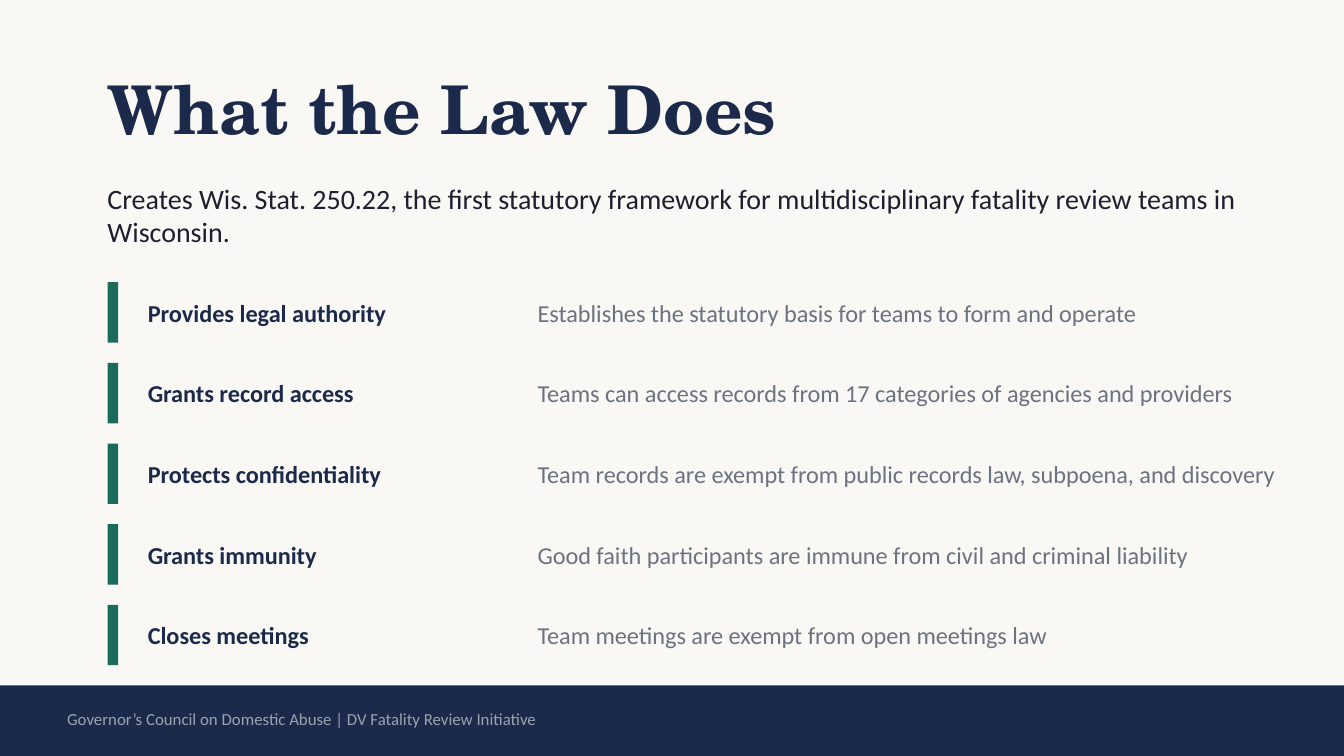
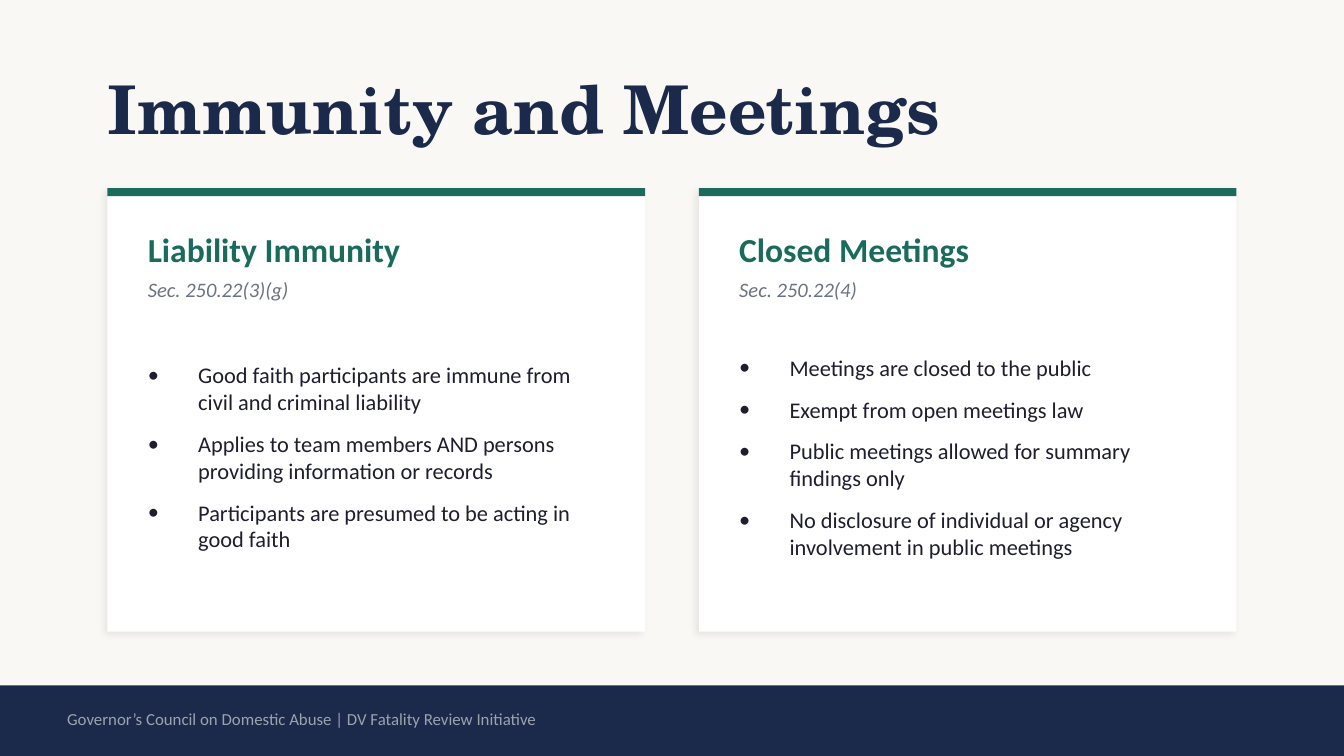
from lxml.etree import SubElement
from pptx import Presentation
from pptx.dml.color import RGBColor
from pptx.enum.shapes import MSO_SHAPE
from pptx.enum.text import MSO_ANCHOR, MSO_AUTO_SIZE, PP_ALIGN
from pptx.oxml.ns import qn
from pptx.util import Inches, Pt

NAVY = RGBColor(0x1B, 0x2A, 0x4A)
GREEN = RGBColor(0x1A, 0x6B, 0x5C)
CREAM = RGBColor(0xFA, 0xF8, 0xF4)
WHITE = RGBColor(0xFF, 0xFF, 0xFF)
INK = RGBColor(0x1E, 0x1E, 0x2E)
GRAY = RGBColor(0x6B, 0x72, 0x80)
LIGHT_GRAY = RGBColor(0x9C, 0xA3, 0xAF)

TITLE_FONT = "TeX Gyre Schola"
BODY_FONT = "Calibri"
SLIDE_WIDTH = 10
SLIDE_HEIGHT = SLIDE_WIDTH * 9 / 16
MARGIN = 0.8
CONTENT_WIDTH = SLIDE_WIDTH - 2 * MARGIN
BULLET_INDENT = Pt(27)
FOOTER = "Governor’s Council on Domestic Abuse | DV Fatality Review Initiative"

PROVISIONS = [
    ("Provides legal authority",
     "Establishes the statutory basis for teams to form and operate"),
    ("Grants record access",
     "Teams can access records from 17 categories of agencies and providers"),
    ("Protects confidentiality",
     "Team records are exempt from public records law, subpoena, and discovery"),
    ("Grants immunity",
     "Good faith participants are immune from civil and criminal liability"),
    ("Closes meetings",
     "Team meetings are exempt from open meetings law"),
]

CARDS = [
    ("Liability Immunity", "Sec. 250.22(3)(g)", [
        "Good faith participants are immune from civil and criminal liability",
        "Applies to team members AND persons providing information or records",
        "Participants are presumed to be acting in good faith",
    ]),
    ("Closed Meetings", "Sec. 250.22(4)", [
        "Meetings are closed to the public",
        "Exempt from open meetings law",
        "Public meetings allowed for summary findings only",
        "No disclosure of individual or agency involvement in public meetings",
    ]),
]


def prepare_frame(frame):
    frame.word_wrap = True
    frame.auto_size = MSO_AUTO_SIZE.NONE
    frame.vertical_anchor = MSO_ANCHOR.MIDDLE
    frame.margin_left = frame.margin_right = 0
    frame.margin_top = frame.margin_bottom = 0


def add_run(paragraph, text, size, color, bold=False, italic=False, font=BODY_FONT):
    run = paragraph.add_run()
    run.text = text
    run.font.name = font
    run.font.size = Pt(size)
    run.font.bold = bold
    run.font.italic = italic
    run.font.color.rgb = color


def add_frame(slide, left, top, width, height):
    """Add an empty text box and return its text frame."""
    box = slide.shapes.add_textbox(
        Inches(left), Inches(top), Inches(width), Inches(height))
    prepare_frame(box.text_frame)
    return box.text_frame


def add_text(slide, left, top, width, height, text, size, color, **style):
    frame = add_frame(slide, left, top, width, height)
    add_run(frame.paragraphs[0], text, size, color, **style)


def add_bullets(slide, left, top, width, height, items):
    frame = add_frame(slide, left, top, width, height)
    for i, item in enumerate(items):
        paragraph = frame.paragraphs[0] if i == 0 else frame.add_paragraph()
        properties = paragraph._p.get_or_add_pPr()
        properties.set("marL", str(BULLET_INDENT))
        properties.set("indent", str(-BULLET_INDENT))
        SubElement(properties, qn("a:buSzPct"), val="100000")
        SubElement(properties, qn("a:buFont"), typeface=BODY_FONT)
        SubElement(properties, qn("a:buChar"), char="•")
        paragraph.font.size = Pt(12)
        if i < len(items) - 1:
            paragraph.space_after = Pt(8)
        add_run(paragraph, item, 12, INK)


def add_block(slide, left, top, width, height, color):
    """Add a plain filled rectangle."""
    block = slide.shapes.add_shape(
        MSO_SHAPE.RECTANGLE,
        Inches(left), Inches(top), Inches(width), Inches(height))
    block.shadow.inherit = False
    block.fill.solid()
    block.fill.fore_color.rgb = color
    block.line.fill.background()
    return block


def add_soft_shadow(shape):
    effects = shape._element.spPr.find(qn("a:effectLst"))
    shadow = SubElement(
        effects, qn("a:outerShdw"), blurRad=str(Pt(4)), dist=str(Pt(2)),
        dir=str(135 * 60000), algn="bl", rotWithShape="0")
    black = SubElement(shadow, qn("a:srgbClr"), val="000000")
    SubElement(black, qn("a:alpha"), val="8000")


def add_titled_slide(prs, text):
    slide = prs.slides.add_slide(prs.slide_layouts[5])
    title = slide.shapes.title
    title.left, title.top = Inches(MARGIN), Inches(0.4)
    title.width, title.height = Inches(CONTENT_WIDTH), Inches(0.8)
    prepare_frame(title.text_frame)
    paragraph = title.text_frame.paragraphs[0]
    paragraph.alignment = PP_ALIGN.LEFT
    add_run(paragraph, text, 36, NAVY, bold=True, font=TITLE_FONT)
    return slide


def add_footer(slide):
    add_block(slide, 0, 5.1, SLIDE_WIDTH, SLIDE_HEIGHT - 5.1, NAVY)
    add_text(slide, 0.5, 5.15, 9, 0.4, FOOTER, 9, LIGHT_GRAY)


def add_provision(slide, top, name, effect):
    height = 0.45
    add_block(slide, MARGIN, top, 0.08, height, GREEN)
    add_text(slide, 1.1, top, 2.8, height, name, 13, NAVY, bold=True)
    add_text(slide, 4, top, 5.5, height, effect, 13, GRAY)


def add_card(slide, left, heading, section, points):
    top, width = 1.4, 4
    inner = left + 0.3
    add_soft_shadow(add_block(slide, left, top, width, 3.3, WHITE))
    add_block(slide, left, top, width, 0.06, GREEN)
    add_text(slide, inner, 1.65, 3.6, 0.4, heading, 18, GREEN, bold=True)
    add_text(slide, inner, 2, 3.6, 0.3, section, 11, GRAY, italic=True)
    add_bullets(slide, inner, 2.4, 3.4, 2, points)


def build_law_slide(prs):
    slide = add_titled_slide(prs, "What the Law Does")
    add_text(slide, MARGIN, 1.3, CONTENT_WIDTH, 0.6,
             "Creates Wis. Stat. 250.22, the first statutory framework for "
             "multidisciplinary fatality review teams in Wisconsin.", 15, INK)
    for i, (name, effect) in enumerate(PROVISIONS):
        add_provision(slide, 2.1 + 0.6 * i, name, effect)
    add_footer(slide)


def build_immunity_slide(prs):
    slide = add_titled_slide(prs, "Immunity and Meetings")
    for i, card in enumerate(CARDS):
        add_card(slide, MARGIN + 4.4 * i, *card)
    add_footer(slide)


def main():
    prs = Presentation()
    prs.slide_width, prs.slide_height = Inches(SLIDE_WIDTH), Inches(SLIDE_HEIGHT)
    background = prs.slide_master.background.fill
    background.solid()
    background.fore_color.rgb = CREAM
    build_law_slide(prs)
    build_immunity_slide(prs)
    prs.save("out.pptx")


if __name__ == "__main__":
    main()
